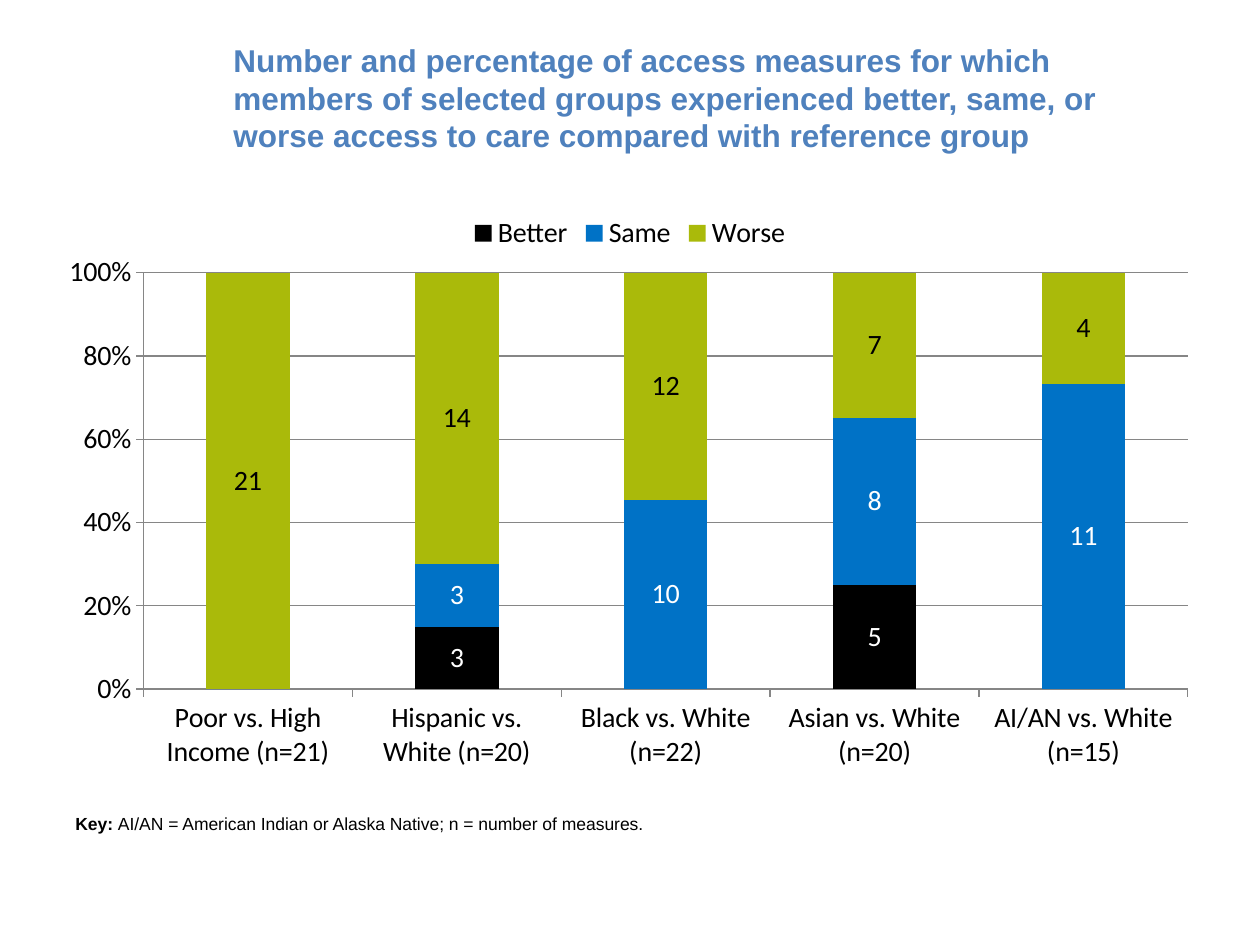
from lxml.etree import SubElement as Sub
from pptx import Presentation
from pptx.chart.data import CategoryChartData as ChartData
from pptx.dml.color import RGBColor
from pptx.enum.chart import XL_CHART_TYPE as Kind, XL_LEGEND_POSITION as Spot
from pptx.enum.chart import XL_LABEL_POSITION as Place, XL_TICK_MARK as Tick
from pptx.enum.text import MSO_ANCHOR as Anchor, PP_ALIGN as Align
from pptx.oxml import parse_xml
from pptx.oxml.ns import nsdecls, qn
from pptx.util import Cm, Pt

BLACK = RGBColor(0, 0, 0)
WHITE = RGBColor(255, 255, 255)
BLUE = RGBColor(0x00, 0x72, 0xC6)
GREEN = RGBColor(0xAA, 0xBA, 0x0A)
STEEL = RGBColor(0x4F, 0x81, 0xBD)
GREY = RGBColor(0x86, 0x86, 0x86)

TITLE = ("Number and percentage of access measures for which members of "
         "selected groups experienced better, same, or worse access to care "
         "compared with reference group")
KEY = [("Key: ", True),
       ("AI/AN = American Indian or Alaska Native; n = number of measures.", False)]
GROUPS = ["Poor vs. High Income (n=21)", "Hispanic vs. White (n=20)",
          "Black vs. White (n=22)", "Asian vs. White (n=20)",
          "AI/AN vs. White (n=15)"]
SERIES = [("Better", [None, 3, None, 5, None], BLACK, WHITE),
          ("Same", [0, 3, 10, 8, 11], BLUE, WHITE),
          ("Worse", [21, 14, 12, 7, 4], GREEN, BLACK)]
PLOT = {"x": 0.071, "y": 0.123, "w": 0.921, "h": 0.719}
BODY = {"name": "Calibri", "size": Pt(16), "bold": False}


def style(font, color, **looks):
    for name, value in looks.items():
        setattr(font, name, value)
    font.color.rgb = color


def place(shape, left, top, width, height):
    shape.left, shape.top = Cm(left), Cm(top)
    shape.width, shape.height = Cm(width), Cm(height)


def draw_chart(slide):
    data = ChartData()
    data.categories = GROUPS
    for name, values, *_ in SERIES:
        data.add_series(name, values)
    chart = slide.shapes.add_chart(Kind.COLUMN_STACKED_100, Cm(1.27), Cm(4.06),
                                   Cm(22.86), Cm(11.68), data).chart
    style(chart.font, BLACK, name="Arial", size=Pt(10))
    chart.has_title = False
    chart.has_legend = True
    chart.legend.position = Spot.TOP
    chart.legend.include_in_layout = False
    style(chart.legend.font, BLACK, **BODY)

    for axis in (chart.category_axis, chart.value_axis):
        axis.major_tick_mark = Tick.OUTSIDE
        axis.minor_tick_mark = Tick.NONE
        axis.format.line.color.rgb = GREY
        style(axis.tick_labels.font, BLACK, **BODY)
    axis.minimum_scale, axis.maximum_scale, axis.major_unit = 0, 1, 0.2
    axis.tick_labels.number_format = "0%"
    axis.tick_labels.number_format_is_linked = False
    axis.has_major_gridlines = True
    axis.major_gridlines.format.line.color.rgb = GREY

    plot = chart.plots[0]
    plot.gap_width, plot.overlap, plot.vary_by_categories = 150, 100, False
    for bar, (_, values, fill, ink) in zip(plot.series, SERIES):
        bar.format.fill.solid()
        bar.format.fill.fore_color.rgb = fill
        bar.invert_if_negative = False
        tags = bar.data_labels
        tags.show_value = True
        tags.position = Place.CENTER
        style(tags.font, ink, **BODY)
        if 0 in values:
            hide = parse_xml(f'<c:dLbl {nsdecls("c")}><c:idx val="{values.index(0)}"/>'
                             '<c:delete val="1"/></c:dLbl>')
            bar._element.find(qn("c:dLbls")).insert(0, hide)

    area = chart._chartSpace.chart.plotArea
    for old in area.findall(qn("c:layout")):
        area.remove(old)
    frame = parse_xml(f'<c:layout {nsdecls("c")}><c:manualLayout/></c:layout>')
    parts = [("layoutTarget", "inner"), ("xMode", "edge"), ("yMode", "edge")]
    for tag, value in parts + list(PLOT.items()):
        Sub(frame[0], qn("c:" + tag)).set("val", str(value))
    area.insert(0, frame)


def main():
    deck = Presentation()
    deck.slide_width, deck.slide_height = Cm(25.4), Cm(19.05)
    slide = deck.slides.add_slide(deck.slide_layouts[5])

    title = slide.shapes.title
    place(title, 4.45, 0.76, 19.69, 2.41)
    text = title.text_frame
    text.text, text.word_wrap = TITLE, True
    text.vertical_anchor = Anchor.MIDDLE
    text.paragraphs[0].alignment = Align.LEFT
    style(text.paragraphs[0].runs[0].font, STEEL,
          name="Arial", size=Pt(18), bold=True)

    draw_chart(slide)

    note = slide.shapes.add_textbox(Cm(1.27), Cm(16.26), Cm(22.86), Cm(0.69))
    note.text_frame.word_wrap = True
    for words, bold in KEY:
        run = note.text_frame.paragraphs[0].add_run()
        run.text = words
        style(run.font, BLACK, name="Arial", size=Pt(10), bold=bold)

    deck.save("out.pptx")


if __name__ == "__main__":
    main()
